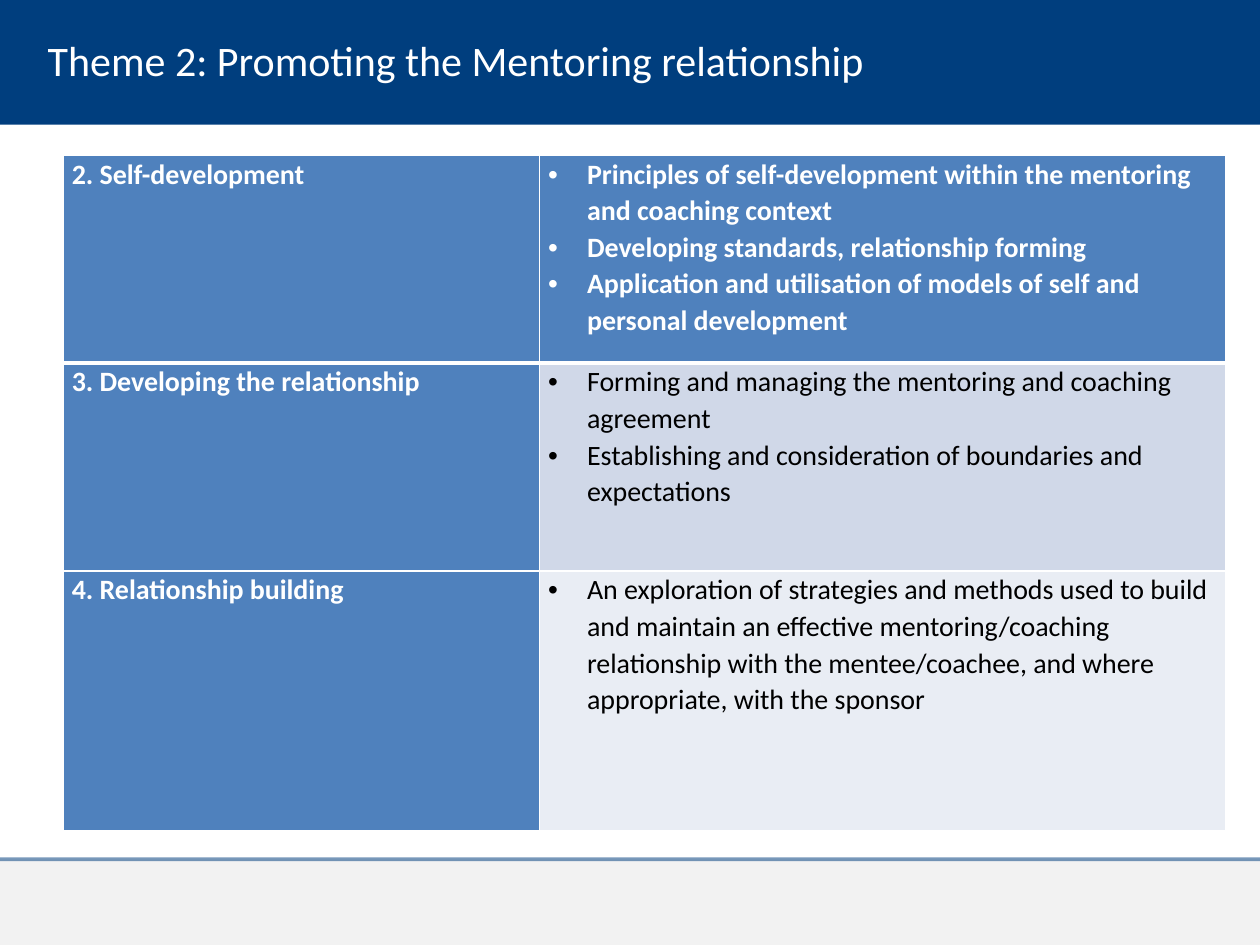
import pptx
import pptx.dml.color
import pptx.enum.shapes
import pptx.enum.text
import pptx.oxml
import pptx.oxml.ns
import pptx.util
from lxml import etree
from pptx.util import Inches

FONT = "Calibri"
WHITE, BLACK, NAVY, BLUE = "FFFFFF", "000000", "003E7E", "4F81BD"

# Topic, its points, fill and colour of the points, row height
TOPICS = [
    ("2. Self-development",
     ["Principles of self-development within the mentoring and coaching context",
      "Developing standards, relationship forming",
      "Application and utilisation of models of self and personal development"],
     BLUE, WHITE, 1.65),
    ("3. Developing the relationship",
     ["Forming and managing the mentoring and coaching agreement",
      "Establishing and consideration of boundaries and expectations"],
     "D0D8E8", BLACK, 1.65),
    ("4. Relationship building",
     ["An exploration of strategies and methods used to build and maintain an effective "
      "mentoring/coaching relationship with the mentee/coachee, and where appropriate, "
      "with the sponsor"],
     "E9EDF4", BLACK, 2.06),
]
COLUMN_WIDTHS = [3.78, 5.45]


def set_color(color_format, color):
    color_format.rgb = pptx.dml.color.RGBColor.from_string(color)


def add_element(parent, tag, **attributes):
    element = etree.SubElement(parent, pptx.oxml.ns.qn(tag))
    for name, value in attributes.items():
        element.set(name, str(value))
    return element


def set_alpha(element, percent):
    color = next(element.iter(pptx.oxml.ns.qn("a:srgbClr")))
    add_element(color, "a:alpha", val=percent * 1000)


def add_run(paragraph, text, size, color, bold=False):
    run = paragraph.add_run()
    run.text = text
    run.font.name = FONT
    run.font.size = pptx.util.Pt(size)
    run.font.bold = bold
    set_color(run.font.color, color)


def add_band(slide, top, height, color, opacity=100):
    band = slide.shapes.add_shape(pptx.enum.shapes.MSO_SHAPE.RECTANGLE,
                                  0, Inches(top), Inches(10), Inches(height))
    band.shadow.inherit = False
    band.fill.solid()
    set_color(band.fill.fore_color, color)
    band.line.fill.background()
    if opacity < 100:
        set_alpha(band.fill.fore_color._xFill, opacity)


def add_rule(slide, top, color, width, opacity):
    rule = slide.shapes.add_connector(pptx.enum.shapes.MSO_CONNECTOR.STRAIGHT,
                                      0, Inches(top), Inches(10), Inches(top))
    rule.line.width = pptx.util.Pt(width)
    set_color(rule.line.color, color)
    properties = rule._element.spPr
    set_alpha(properties, opacity)
    add_element(properties, "a:effectLst")


def add_title(slide, text):
    box = slide.shapes.add_textbox(Inches(0.28), Inches(0.13), Inches(7.29), Inches(0.69))
    frame = box.text_frame
    frame.word_wrap = True
    frame.vertical_anchor = pptx.enum.text.MSO_ANCHOR.MIDDLE
    add_run(frame.paragraphs[0], text, 24, WHITE)


def set_borders(cell, top, bottom):
    properties = cell._tc.get_or_add_tcPr()
    widths = {"a:lnL": 1, "a:lnR": 1, "a:lnT": top, "a:lnB": bottom}
    for index, (tag, width) in enumerate(widths.items()):
        border = add_element(properties, tag, w=pptx.util.Pt(width))
        add_element(add_element(border, "a:solidFill"), "a:srgbClr", val=WHITE)
        properties.insert(index, border)


def add_bullet(paragraph):
    properties = paragraph._p.get_or_add_pPr()
    properties.set("marL", str(Inches(0.31)))
    properties.set("indent", str(Inches(-0.31)))
    add_element(properties, "a:buFont", typeface="Arial")
    add_element(properties, "a:buChar", char="•")


def fill_cell(cell, lines, fill, color, bold, bulleted):
    cell.margin_left = cell.margin_right = Inches(0.07)
    cell.margin_top = cell.margin_bottom = 0
    cell.fill.solid()
    set_color(cell.fill.fore_color, fill)
    frame = cell.text_frame
    for index, line in enumerate(lines):
        paragraph = frame.add_paragraph() if index else frame.paragraphs[0]
        paragraph.line_spacing = 1.07
        if bulleted:
            add_bullet(paragraph)
        add_run(paragraph, line, 16, color, bold)


def add_topic_table(slide):
    table = slide.shapes.add_table(
        len(TOPICS), len(COLUMN_WIDTHS), Inches(0.5), Inches(1.23),
        Inches(sum(COLUMN_WIDTHS)), Inches(sum(topic[-1] for topic in TOPICS))).table
    for column, width in zip(table.columns, COLUMN_WIDTHS):
        column.width = Inches(width)
    for index, (topic, points, fill, color, height) in enumerate(TOPICS):
        row = table.rows[index]
        row.height = Inches(height)
        topic_cell, points_cell = row.cells
        fill_cell(topic_cell, [topic], BLUE, WHITE, True, False)
        fill_cell(points_cell, points, fill, color, index == 0, True)
        # A heavier border separates the header row
        for cell in row.cells:
            set_borders(cell, 3 if index == 1 else 1, 3 if index == 0 else 1)


def main():
    presentation = pptx.Presentation()
    presentation.slide_width = Inches(10)
    presentation.slide_height = Inches(7.5)
    slide = presentation.slides.add_slide(presentation.slide_layouts[6])

    # Header and footer bands
    add_band(slide, 0, 0.99, NAVY)
    add_band(slide, 6.82, 0.68, "808080", 10)
    add_rule(slide, 6.82, NAVY, 2.25, 52)

    # Content
    add_title(slide, "Theme 2: Promoting the Mentoring relationship")
    add_topic_table(slide)
    presentation.save("out.pptx")


if __name__ == "__main__":
    main()
